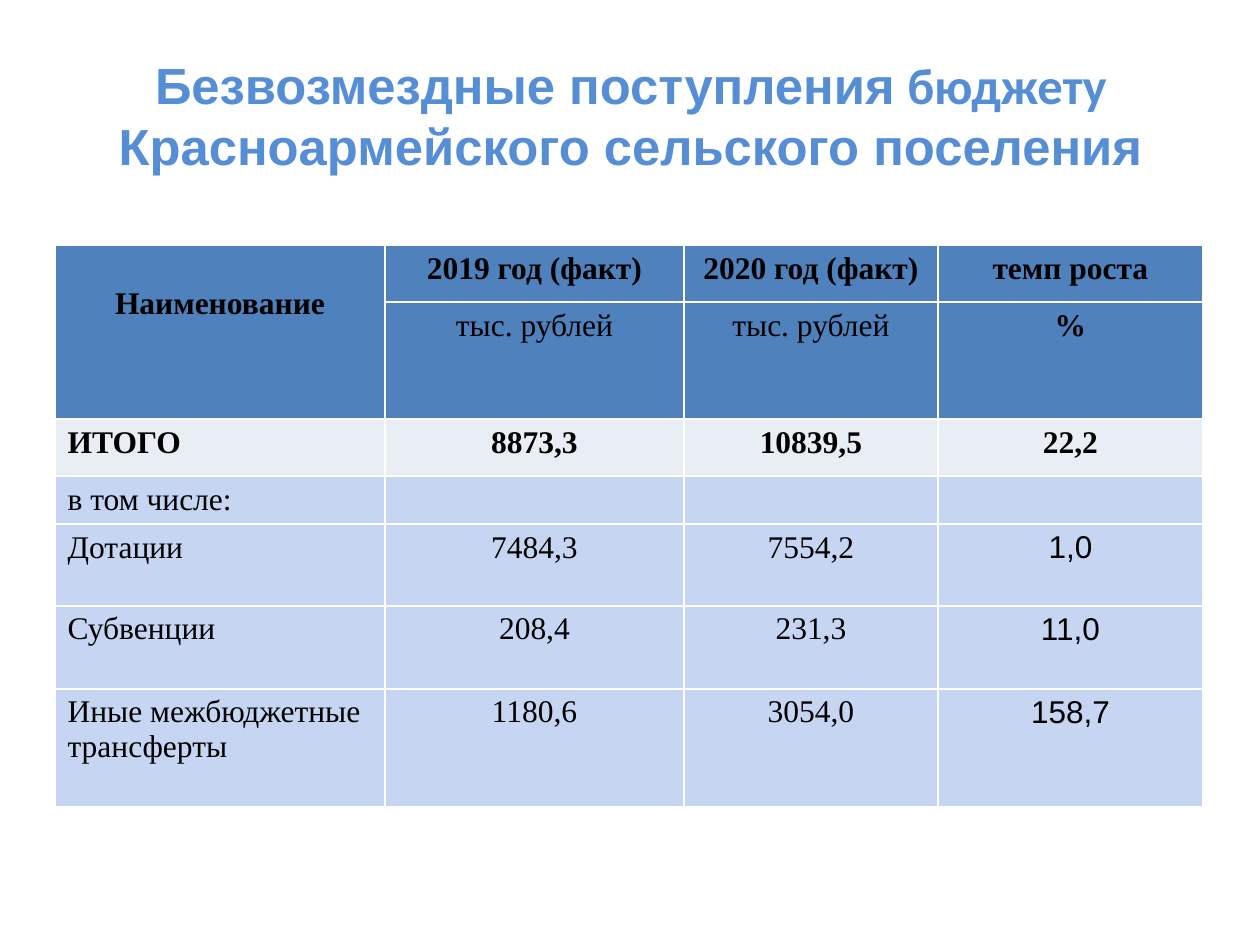
from dataclasses import dataclass

from lxml.etree import SubElement
from pptx import Presentation
from pptx.dml.color import RGBColor
from pptx.enum.text import MSO_ANCHOR, PP_ALIGN
from pptx.oxml.ns import qn
from pptx.util import Pt

PX = 914400 // 126


@dataclass(frozen=True)
class Theme:
    title: str = "558ED5"
    text: str = "000000"
    header: str = "4F81BD"
    total: str = "E9EDF4"
    body: str = "C6D5F2"
    border: str = "FFFFFF"
    sans: str = "Arial"
    title_alt: str = "Calibri"
    serif: str = "Times New Roman"
    title_size: int = 29
    table_size: int = 18
    border_width: int = 1


class SlideBuilder:
    """Adds styled elements to one slide, measured in px."""

    def __init__(self, prs, theme):
        self.theme = theme
        self.slide = prs.slides.add_slide(prs.slide_layouts[6])

    def style(self, r, font, size, color, bold):
        r.font.name = font
        r.font.size = Pt(size)
        r.font.bold = bold
        r.font.color.rgb = RGBColor.from_string(color)

    def title(self, box, parts):
        t = self.theme
        sp = self.slide.shapes.add_textbox(*(v * PX for v in box))
        tf = sp.text_frame
        tf.word_wrap = True
        tf.vertical_anchor = MSO_ANCHOR.MIDDLE
        p = tf.paragraphs[0]
        p.alignment = PP_ALIGN.CENTER
        for text, font in parts:
            r = p.add_run()
            r.text = text
            self.style(r, font, t.title_size, t.title, True)

    def borders(self, cell):
        t = self.theme
        tc_pr = cell._tc.get_or_add_tcPr()
        for side in ("lnL", "lnR", "lnT", "lnB"):
            ln = SubElement(tc_pr, qn(f"a:{side}"), w=str(Pt(t.border_width)))
            fill = SubElement(ln, qn("a:solidFill"))
            SubElement(fill, qn("a:srgbClr"), val=t.border)

    def cell(self, cell, text, fill, align, font, bold):
        t = self.theme
        self.borders(cell)
        cell.fill.solid()
        cell.fill.fore_color.rgb = RGBColor.from_string(fill)
        cell.margin_top, cell.margin_bottom = (6 * PX, 4 * PX) if text else (0, 0)
        p = cell.text_frame.paragraphs[0]
        p.text = text
        p.alignment = align
        for r in p.runs:
            self.style(r, font, t.table_size, t.text, bold)

    def table(self, left, top, widths, heights, rows):
        t = self.theme
        frame = self.slide.shapes.add_table(
            len(heights), len(widths), left * PX, top * PX,
            sum(widths) * PX, sum(heights) * PX)
        table = frame.table
        table.first_row = table.horz_banding = False
        for column, width in zip(table.columns, widths):
            column.width = width * PX
        for row, height in zip(table.rows, heights):
            row.height = height * PX
        for i, values in enumerate(rows):
            fill = t.header if i < 2 else t.total if i == 2 else t.body
            for j, text in enumerate(values):
                align = PP_ALIGN.LEFT if j == 0 and i >= 2 else PP_ALIGN.CENTER
                font = t.sans if j == 3 and i > 3 else t.serif
                bold = i in (0, 2) or text == "%"
                self.cell(table.cell(i, j), text, fill, align, font, bold)
        return table


def main():
    prs = Presentation()
    prs.slide_width, prs.slide_height = 1260 * PX, 945 * PX
    theme = Theme()
    s = SlideBuilder(prs, theme)
    s.title((64, 45, 1134, 139), [
        ("Безвозмездные поступления", theme.sans),
        (" бюджету ", theme.title_alt),
        ("Красноармейского сельского поселения", theme.sans),
    ])
    table = s.table(55, 245, (330, 299, 254, 265), (57, 117, 57, 48, 82, 83, 118), [
        ("Наименование", "2019 год (факт)", "2020 год (факт)", "темп роста"),
        ("", "тыс. рублей", "тыс. рублей", "%"),
        ("ИТОГО", "8873,3", "10839,5", "22,2"),
        ("в том числе:", "", "", ""),
        ("Дотации", "7484,3", "7554,2", "1,0"),
        ("Субвенции", "208,4", "231,3", "11,0"),
        ("Иные межбюджетные трансферты", "1180,6", "3054,0", "158,7"),
    ])
    name_cell = table.cell(0, 0)
    name_cell.merge(table.cell(1, 0))
    name_cell.margin_top = 41 * PX
    prs.save("out.pptx")


if __name__ == "__main__":
    main()
